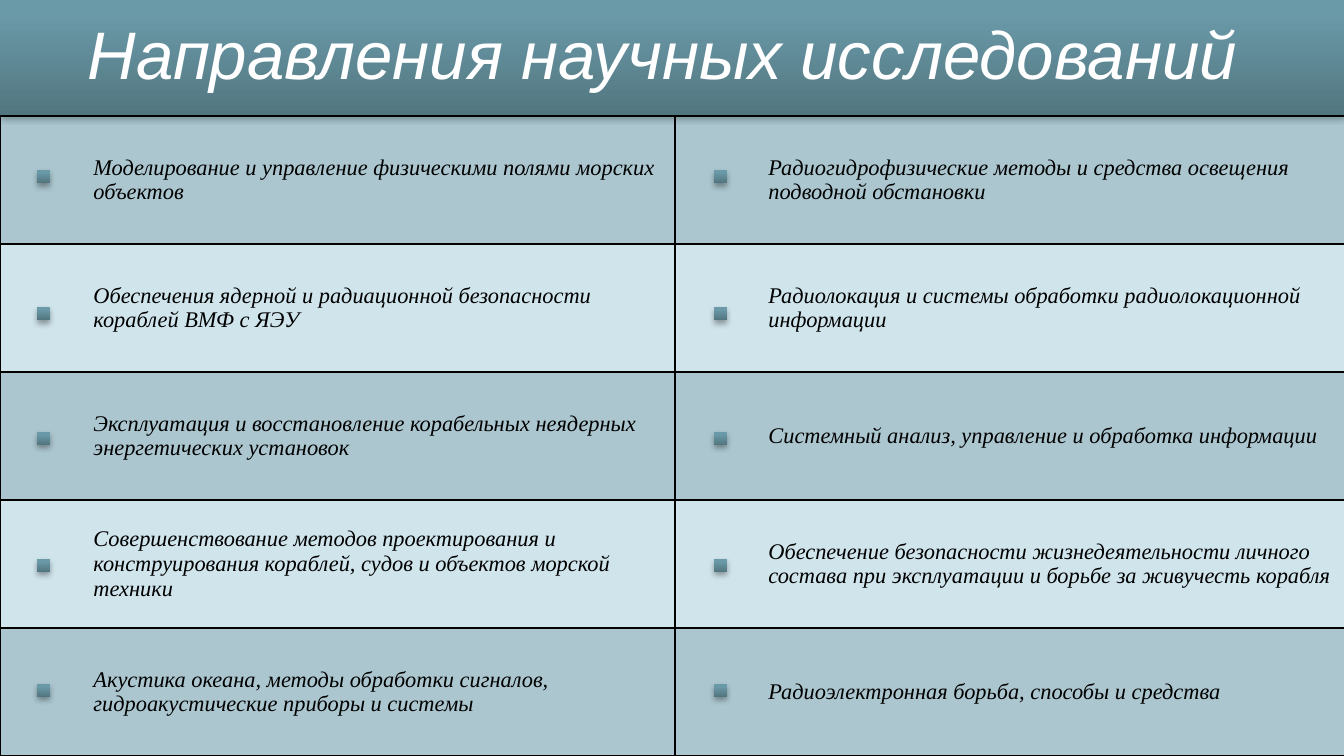
from dataclasses import dataclass

from lxml.etree import SubElement
from pptx import Presentation
from pptx.dml.color import RGBColor
from pptx.enum.shapes import MSO_SHAPE
from pptx.enum.text import MSO_ANCHOR, PP_ALIGN
from pptx.oxml import parse_xml
from pptx.oxml.ns import nsdecls, qn
from pptx.util import Emu, Pt

PX_PER_INCH = 134.4


def px(length):
    return Emu(round(length * 914400 / PX_PER_INCH))


@dataclass(frozen=True)
class Theme:
    background: str = "D0E4EC"
    band: str = "759AA5"
    band_opacity: int = 40
    gradient: tuple = ((0, "527680"), (80, "6A99A7"), (100, "6A9AA9"))
    text: str = "000000"
    title_text: str = "FFFFFF"
    border: str = "000000"
    border_width: int = 1
    title_font: str = "Arial"
    body_font: str = "Times New Roman"
    title_size: int = 36
    body_size: int = 12


class SlideBuilder:
    def __init__(self, page, theme):
        self.page = page
        self.theme = theme
        fill = page.background.fill
        fill.solid()
        fill.fore_color.rgb = RGBColor.from_string(theme.background)

    def style_text(self, para, font_name, size, color):
        for span in para.runs:
            span.font.name = font_name
            span.font.size = Pt(size)
            span.font.italic = True
            span.font.bold = False
            span.font.color.rgb = RGBColor.from_string(color)

    def gradient_box(self, left, top, width, height):
        """Add a borderless rectangle with the theme gradient and a soft shadow."""
        box = self.page.shapes.add_shape(
            MSO_SHAPE.RECTANGLE, px(left), px(top), px(width), px(height))
        stops = "".join(
            f'<a:gs pos="{place * 1000}"><a:srgbClr val="{color}"/></a:gs>'
            for place, color in self.theme.gradient)
        box.element.spPr.append(parse_xml(
            f'<a:gradFill {nsdecls("a")} rotWithShape="1"><a:gsLst>{stops}</a:gsLst>'
            '<a:lin ang="16200000" scaled="0"/></a:gradFill>'))
        box.line.fill.background()
        box.shadow.inherit = False
        box.element.spPr.find(qn("a:effectLst")).append(parse_xml(
            f'<a:outerShdw {nsdecls("a")} blurRad="{Pt(3.1)}" dist="{Pt(1.8)}" '
            'dir="5400000" rotWithShape="0"><a:srgbClr val="000000">'
            '<a:alpha val="35000"/></a:srgbClr></a:outerShdw>'))
        return box

    def title(self, text, left, top, width, height):
        frame = self.gradient_box(left, top, width, height).text_frame
        frame.word_wrap = True
        frame.vertical_anchor = MSO_ANCHOR.MIDDLE
        frame.text = text
        para = frame.paragraphs[0]
        para.alignment = PP_ALIGN.CENTER
        self.style_text(para, self.theme.title_font, self.theme.title_size,
                        self.theme.title_text)

    def table(self, rows, left, top, column_width, row_height, indent):
        columns = len(rows[0])
        table = self.page.shapes.add_table(
            len(rows), columns, px(left), px(top),
            px(column_width * columns), px(row_height * len(rows))).table
        table.first_row = table.horz_banding = False
        for column in table.columns:
            column.width = px(column_width)
        for index, texts in enumerate(rows):
            table.rows[index].height = px(row_height)
            for cell, text in zip(table.rows[index].cells, texts):
                self.fill_cell(cell, text, indent, banded=index % 2 == 0)

    def fill_cell(self, cell, text, indent, banded):
        cell.vertical_anchor = MSO_ANCHOR.MIDDLE
        cell.text_frame.text = text
        para = cell.text_frame.paragraphs[0]
        properties = para._p.get_or_add_pPr()
        properties.set("marL", str(px(indent)))
        properties.set("indent", "0")
        self.style_text(para, self.theme.body_font, self.theme.body_size,
                        self.theme.text)
        cell_properties = cell._tc.get_or_add_tcPr()
        if banded:
            cell.fill.solid()
            cell.fill.fore_color.rgb = RGBColor.from_string(self.theme.band)
            color = cell_properties.find(".//" + qn("a:srgbClr"))
            SubElement(color, qn("a:alpha"), val=str(self.theme.band_opacity * 1000))
        else:
            cell.fill.background()
        for place, side in enumerate("LRTB"):
            cell_properties.insert(place, parse_xml(
                f'<a:ln{side} {nsdecls("a")} w="{Pt(self.theme.border_width)}">'
                f'<a:solidFill><a:srgbClr val="{self.theme.border}"/></a:solidFill>'
                f'</a:ln{side}>'))


RESEARCH_AREAS = [
    ("Моделирование и управление физическими полями морских объектов",
     "Радиогидрофизические методы и средства освещения подводной обстановки"),
    ("Обеспечения ядерной и радиационной безопасности кораблей ВМФ с ЯЭУ",
     "Радиолокация и системы обработки радиолокационной информации"),
    ("Эксплуатация и восстановление корабельных неядерных энергетических установок",
     "Системный анализ, управление и обработка информации"),
    ("Совершенствование методов проектирования и конструирования кораблей, судов "
     "и объектов морской техники",
     "Обеспечение безопасности жизнедеятельности личного состава при эксплуатации "
     "и борьбе за живучесть корабля"),
    ("Акустика океана, методы обработки сигналов, гидроакустические приборы и системы",
     "Радиоэлектронная борьба, способы и средства"),
]
MARKER_LEFTS = (37, 714)
MARKER_TOPS = (170, 307, 432, 559, 684)
MARKER_SIZE = 13


def main():
    deck = Presentation()
    deck.slide_width, deck.slide_height = px(1344), px(756)
    page = deck.slides.add_slide(deck.slide_layouts[6])
    builder = SlideBuilder(page, Theme())

    # Title band
    builder.title("Направления научных исследований ", 0, -11, 1344, 127)

    # Research areas
    builder.table(RESEARCH_AREAS, 0, 116, column_width=675, row_height=128, indent=80)

    # Square markers
    for left in MARKER_LEFTS:
        for top in MARKER_TOPS:
            builder.gradient_box(left, top, MARKER_SIZE, MARKER_SIZE)

    deck.save("out.pptx")


if __name__ == "__main__":
    main()
